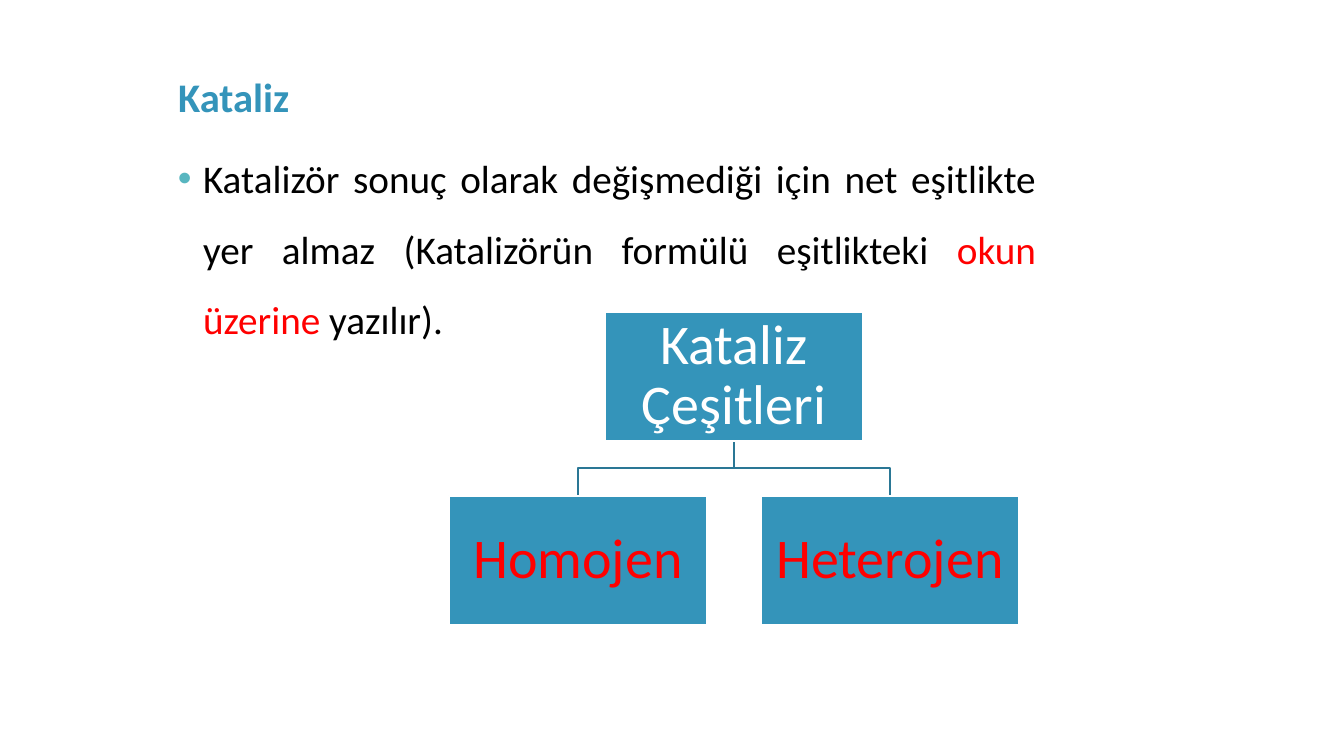
"""Build the slide on catalysis and its two kinds."""
from lxml import etree
from pptx import Presentation
from pptx import util as u
from pptx.dml.color import RGBColor
from pptx.enum import shapes, text
from pptx.oxml.ns import qn

COLORS = {"accent": "3494BA", "line": "2A7795", "bullet": "58B6C0",
          "black": "000000", "red": "FF0000", "white": "FFFFFF"}
FONT = "Calibri"
PX = 914400 / 100.8

TITLE = "Kataliz"
BODY = [
    ("Katalizör sonuç olarak değişmediği için net eşitlikte yer almaz "
     "(Katalizörün formülü eşitlikteki ", "black"),
    ("okun üzerine ", "red"),
    ("yazılır).", "black"),
]
ROOT = "Kataliz Çeşitleri"
KINDS = ["Homojen", "Heterojen"]

TITLE_BOX = (168, 17, 878, 109)
BODY_BOX = (168, 126, 878, 607)
NODE_WIDTH, NODE_HEIGHT, NODE_GAP = 258, 129, 54
CENTER, ROOT_TOP, KIND_TOP = 734, 312, 496


def px(value):
    return u.Emu(round(value * PX))


def color(name):
    return RGBColor.from_string(COLORS[name])


def add_run(paragraph, words, size, color_name, bold=False):
    run = paragraph.add_run()
    run.text = words
    run.font.name, run.font.size, run.font.bold = FONT, u.Pt(size), bold
    run.font.color.rgb = color(color_name)


def add_title(slide):
    title = slide.shapes.title
    title.left, title.top, title.width, title.height = map(px, TITLE_BOX)
    frame = title.text_frame
    frame.auto_size = text.MSO_AUTO_SIZE.NONE
    frame.vertical_anchor = text.MSO_ANCHOR.BOTTOM
    paragraph = frame.paragraphs[0]
    paragraph.alignment, paragraph.line_spacing = text.PP_ALIGN.LEFT, 1.5
    add_run(paragraph, TITLE, 29, "accent", bold=True)


def add_body(slide):
    frame = slide.shapes.add_textbox(*map(px, BODY_BOX)).text_frame
    frame.word_wrap = True
    paragraph = frame.paragraphs[0]
    paragraph.alignment, paragraph.line_spacing = text.PP_ALIGN.JUSTIFY, 1.5
    properties = paragraph._p.get_or_add_pPr()
    indent = u.Inches(0.25)
    properties.set("marL", str(indent))
    properties.set("indent", str(-indent))
    bullet_color = etree.SubElement(properties, qn("a:buClr"))
    etree.SubElement(bullet_color, qn("a:srgbClr"), val=COLORS["bullet"])
    etree.SubElement(properties, qn("a:buFont"), typeface="Arial")
    etree.SubElement(properties, qn("a:buChar"), char="•")
    for words, color_name in BODY:
        add_run(paragraph, words, 28, color_name)


def add_branch(slide, kind_center):
    bottom = ROOT_TOP + NODE_HEIGHT
    middle = (bottom + KIND_TOP) // 2
    builder = slide.shapes.build_freeform(CENTER, bottom, scale=PX)
    builder.add_line_segments(
        [(CENTER, middle), (kind_center, middle), (kind_center, KIND_TOP)], close=False)
    branch = builder.convert_to_shape()
    branch.shadow.inherit = False
    branch.fill.background()
    branch.line.color.rgb, branch.line.width = color("line"), u.Pt(1)


def add_node(slide, words, center, top, color_name):
    node = slide.shapes.add_shape(
        shapes.MSO_SHAPE.RECTANGLE, px(center - NODE_WIDTH / 2), px(top),
        px(NODE_WIDTH), px(NODE_HEIGHT))
    node.shadow.inherit = False
    node.fill.solid()
    node.fill.fore_color.rgb = color("accent")
    node.line.color.rgb, node.line.width = color("white"), u.Pt(1)
    frame = node.text_frame
    frame.word_wrap = True
    frame.vertical_anchor = text.MSO_ANCHOR.MIDDLE
    frame.margin_left = frame.margin_right = px(3)
    frame.margin_top = frame.margin_bottom = px(3)
    paragraph = frame.paragraphs[0]
    paragraph.alignment, paragraph.line_spacing = text.PP_ALIGN.CENTER, 0.9
    add_run(paragraph, words, 40, color_name)


def main():
    presentation = Presentation()
    presentation.slide_width, presentation.slide_height = px(1344), px(756)
    slide = presentation.slides.add_slide(presentation.slide_layouts[5])
    add_title(slide)
    add_body(slide)
    step = NODE_WIDTH + NODE_GAP
    first_center = CENTER - step * (len(KINDS) - 1) // 2
    centers = [first_center + step * index for index in range(len(KINDS))]
    for center in centers:
        add_branch(slide, center)
    add_node(slide, ROOT, CENTER, ROOT_TOP, "white")
    for kind, center in zip(KINDS, centers):
        add_node(slide, kind, center, KIND_TOP, "red")
    presentation.save("out.pptx")


if __name__ == "__main__":
    main()
